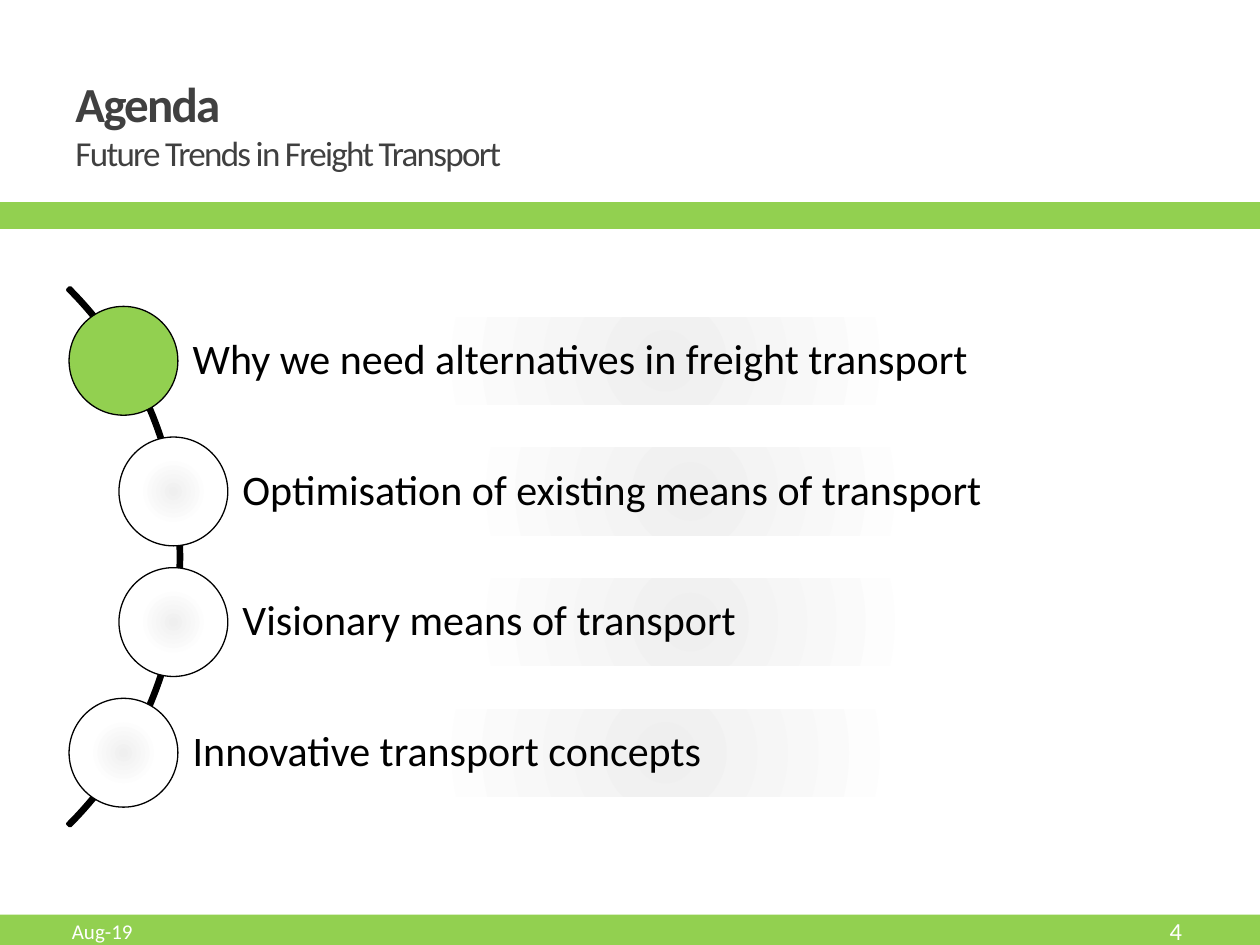
from lxml import etree
from pptx import Presentation
from pptx.dml.color import RGBColor
from pptx.enum.shapes import MSO_SHAPE
from pptx.enum.text import MSO_ANCHOR, PP_ALIGN
from pptx.oxml import parse_xml
from pptx.util import Pt

GREEN, WHITE, BLACK, GRAY = "92D050", "FFFFFF", "000000", "404040"
GRADIENT = """
<a:gradFill xmlns:a="http://schemas.openxmlformats.org/drawingml/2006/main" rotWithShape="1">
  <a:gsLst>
    <a:gs pos="0"><a:srgbClr val="EFEFEF"/></a:gs>
    <a:gs pos="45000"><a:srgbClr val="FFFFFF"/></a:gs>
    <a:gs pos="100000"><a:srgbClr val="FFFFFF"/></a:gs>
  </a:gsLst>
  <a:path path="circle"><a:fillToRect l="100000" t="100000" r="100000" b="100000"/></a:path>
</a:gradFill>"""


def color(value):
    return RGBColor.from_string(value)


def add_shape(kind, left, top, width, height, fill=None, line=None, line_width=0.75):
    """Add a preset shape; fill is a hex colour, "gradient" or None."""
    shape = slide.shapes.add_shape(kind, Pt(left), Pt(top), Pt(width), Pt(height))
    shape.shadow.inherit = False
    if fill == "gradient":
        shape.fill.background()
        no_fill = shape._element.spPr.find("{*}noFill")
        shape._element.spPr.replace(no_fill, parse_xml(GRADIENT))
    elif fill:
        shape.fill.solid()
        shape.fill.fore_color.rgb = color(fill)
    else:
        shape.fill.background()
    if line:
        shape.line.color.rgb = color(line)
        shape.line.width = Pt(line_width)
    else:
        shape.line.fill.background()
    return shape


presentation = Presentation()
presentation.slide_width, presentation.slide_height = Pt(720), Pt(540)
slide = presentation.slides.add_slide(presentation.slide_layouts[6])

# Green bands
add_shape(MSO_SHAPE.RECTANGLE, -3, 522.7, 731.5, 36, GREEN)
add_shape(MSO_SHAPE.RECTANGLE, 0, 116.6, 728.6, 13, GREEN, GREEN, 2.08)

# Title and subtitle
title = slide.shapes.add_textbox(Pt(36), Pt(31.7), Pt(375), Pt(77.8)).text_frame
title.word_wrap = True
title.vertical_anchor = MSO_ANCHOR.MIDDLE
paragraph = title.paragraphs[0]
for text, size, bold in [("Agenda", 28, True),
                         ("Future Trends in Freight Transport", 20, False)]:
    if paragraph.runs:
        paragraph.add_line_break()
    run = paragraph.add_run()
    run.text = text
    run.font.name, run.font.size, run.font.bold = "Calibri", Pt(size), bold
    run.font.color.rgb = color(GRAY)
    run.font._element.set("spc", "-100")

# Agenda items along an arc
arc = add_shape(MSO_SHAPE.BLOCK_ARC, -331.2, 100.8, 434.9, 434.9, None, BLACK, 2.08)
for index, value in enumerate([189, 27, 0.004]):
    arc.adjustments[index] = value

ROW_TOP, ROW_PITCH, BAR_HEIGHT, BAR_RIGHT, DIAMETER = 206.2, 74.65, 49.8, 690, 62.2
items = [
    ("Why we need alternatives in freight transport", 70.6, GREEN),
    ("Optimisation of existing means of transport", 99.1, "gradient"),
    ("Visionary means of transport", 99.1, "gradient"),
    ("Innovative transport concepts", 70.6, "gradient"),
]
for row, (text, center_x, fill) in enumerate(items):
    center_y = ROW_TOP + row * ROW_PITCH
    bar = add_shape(MSO_SHAPE.RECTANGLE, center_x, center_y - BAR_HEIGHT / 2,
                    BAR_RIGHT - center_x, BAR_HEIGHT, "gradient")
    frame = bar.text_frame
    frame.word_wrap = True
    frame.vertical_anchor = MSO_ANCHOR.MIDDLE
    frame.margin_left = Pt(39.5)
    frame.margin_top = frame.margin_right = frame.margin_bottom = Pt(4.8)
    paragraph = frame.paragraphs[0]
    paragraph.text = text
    paragraph.alignment = PP_ALIGN.LEFT
    paragraph.line_spacing = 0.9
    paragraph.font.name, paragraph.font.size = "Calibri", Pt(24)
    paragraph.font.color.rgb = color(BLACK)
    add_shape(MSO_SHAPE.OVAL, center_x - DIAMETER / 2, center_y - DIAMETER / 2,
              DIAMETER, DIAMETER, fill, BLACK)

# Footer
for text, left, width, size, alignment in [("Aug-19", 34, 228, 12, PP_ALIGN.LEFT),
                                           ("4", 598.3, 84.2, 14, PP_ALIGN.RIGHT)]:
    frame = slide.shapes.add_textbox(Pt(left), Pt(519.1), Pt(width), Pt(26)).text_frame
    frame.word_wrap = True
    frame.vertical_anchor = MSO_ANCHOR.MIDDLE
    paragraph = frame.paragraphs[0]
    paragraph.text = text
    paragraph.alignment = alignment
    paragraph.font.name, paragraph.font.size = "Calibri", Pt(size)
    paragraph.font.color.rgb = color(WHITE)

presentation.save("out.pptx")
